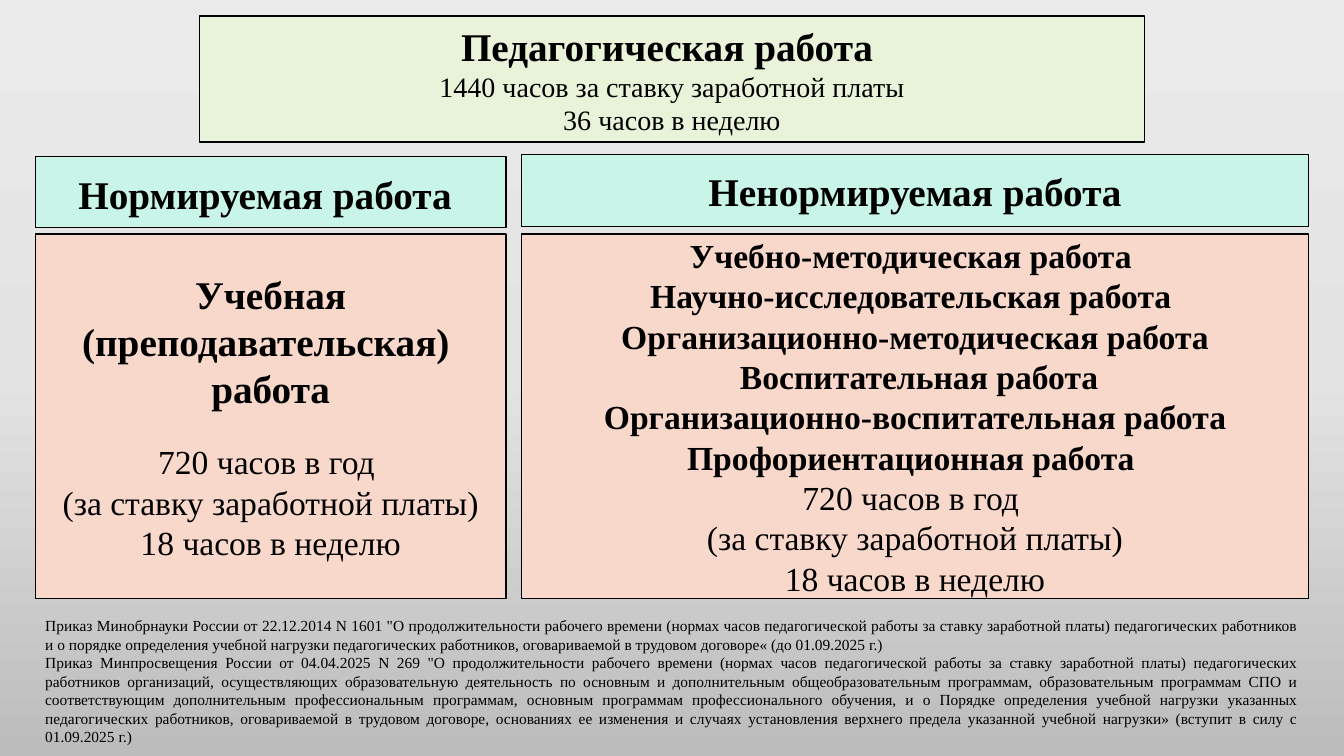
from copy import deepcopy

from pptx import Presentation
from pptx.dml.color import RGBColor
from pptx.enum.shapes import MSO_SHAPE
from pptx.enum.text import MSO_ANCHOR, PP_ALIGN
from pptx.oxml.ns import qn
from pptx.util import Emu, Pt

RECTANGLE = MSO_SHAPE.RECTANGLE
MIDDLE = MSO_ANCHOR.MIDDLE
CENTER = PP_ALIGN.CENTER
JUSTIFY = PP_ALIGN.JUSTIFY

BLACK = RGBColor(0x00, 0x00, 0x00)
GREEN = RGBColor(0xE8, 0xF3, 0xDA)
MINT = RGBColor(0xC8, 0xF5, 0xE8)
PEACH = RGBColor(0xF8, 0xD8, 0xCA)
BACKGROUND = [
    (0, RGBColor(0xEB, 0xEA, 0xEA)),
    (0.5, RGBColor(0xE4, 0xE3, 0xE3)),
    (1, RGBColor(0xBD, 0xBC, 0xBC)),
]

EMU_PER_PX = 9144
LEFT_X, LEFT_WIDTH = 35, 467
RIGHT_X, RIGHT_WIDTH = 517, 781
BODY_Y, BODY_HEIGHT = 232, 362

HOURS = ["720 часов в год ", "(за ставку заработной платы)", "18 часов в неделю"]
UNREGULATED_WORK = [
    "Учебно-методическая работа ",
    "Научно-исследовательская работа ",
    "Организационно-методическая работа",
    " Воспитательная работа",
    "Организационно-воспитательная работа",
    "Профориентационная работа ",
]
ORDERS = [
    "Приказ Минобрнауки России от 22.12.2014 N 1601 \"О продолжительности рабочего "
    "времени (нормах часов педагогической работы за ставку заработной платы) "
    "педагогических работников и о порядке определения учебной нагрузки педагогических "
    "работников, оговариваемой в трудовом договоре« (до 01.09.2025 г.)",
    "Приказ Минпросвещения России от 04.04.2025 N 269 \"О продолжительности рабочего "
    "времени (нормах часов педагогической работы за ставку заработной платы) "
    "педагогических работников организаций, осуществляющих образовательную деятельность "
    "по основным и дополнительным общеобразовательным программам, образовательным "
    "программам СПО и соответствующим дополнительным профессиональным программам, "
    "основным программам профессионального обучения, и о Порядке определения учебной "
    "нагрузки указанных педагогических работников, оговариваемой в трудовом договоре, "
    "основаниях ее изменения и случаях установления верхнего предела указанной учебной "
    "нагрузки» (вступит в силу с 01.09.2025 г.)",
]


def lines(texts, size, bold=False):
    """Return one single-run paragraph for each text."""
    return [[(text, size, bold)] for text in texts]


class SlideBuilder:
    """Holds the style and the current slide."""

    font = "Times New Roman"
    line_width = Pt(1)

    def __init__(self, slide):
        self.slide = slide

    def background(self, stops):
        """Fill the background with a vertical gradient."""
        fill = self.slide.background.fill
        fill.gradient()
        fill.gradient_angle = 270
        stop_list = self.slide.element.find(".//" + qn("a:gsLst"))
        while len(stop_list) < len(stops):
            stop_list.append(deepcopy(stop_list[0]))
        for stop, (position, color) in zip(fill.gradient_stops, stops):
            stop.position = position
            stop.color.rgb = color

    def box(self, bounds, color, paragraphs):
        """Add an outlined rectangle with centred text."""
        shape = self.slide.shapes.add_shape(RECTANGLE, *self.scale(bounds))
        shape.shadow.inherit = False
        shape.fill.solid()
        shape.fill.fore_color.rgb = color
        shape.line.color.rgb = BLACK
        shape.line.width = self.line_width
        return self.fill_text(shape.text_frame, paragraphs, CENTER)

    def note(self, bounds, paragraphs):
        """Add a justified text box."""
        shape = self.slide.shapes.add_textbox(*self.scale(bounds))
        return self.fill_text(shape.text_frame, paragraphs, JUSTIFY)

    def scale(self, bounds):
        """Turn px lengths into EMU."""
        return [Emu(length * EMU_PER_PX) for length in bounds]

    def fill_text(self, frame, paragraphs, alignment):
        """Add paragraphs run by run and return the text frame."""
        frame.word_wrap = True
        frame.vertical_anchor = MIDDLE
        for index, runs in enumerate(paragraphs):
            paragraph = frame.add_paragraph() if index else frame.paragraphs[0]
            paragraph.alignment = alignment
            for text, size, bold in runs:
                run = paragraph.add_run()
                run.text = text
                run.font.name = self.font
                run.font.size = Pt(size)
                run.font.bold = bold
                run.font.color.rgb = BLACK
        return frame


def main():
    """Build the slide and save it."""
    presentation = Presentation()
    presentation.slide_width = Emu(1333 * EMU_PER_PX)
    presentation.slide_height = Emu(750 * EMU_PER_PX)
    builder = SlideBuilder(presentation.slides.add_slide(presentation.slide_layouts[6]))
    builder.background(BACKGROUND)

    builder.box(
        (198, 16, 937, 125),
        GREEN,
        lines(["Педагогическая работа "], 28, True)
        + lines(["1440 часов за ставку заработной платы", "36 часов в неделю"], 20),
    )
    builder.box(
        (LEFT_X, 155, LEFT_WIDTH, 71),
        MINT,
        [[("Нормируемая работа", 28, True), (" ", 32, True)]],
    )
    builder.box(
        (RIGHT_X, 153, RIGHT_WIDTH, 72),
        MINT,
        lines(["Ненормируемая работа"], 28, True),
    )

    teaching = lines(["Учебная (преподавательская) ", "работа"], 28, True)
    teaching_frame = builder.box(
        (LEFT_X, BODY_Y, LEFT_WIDTH, BODY_HEIGHT), PEACH, teaching + lines(HOURS, 24)
    )
    teaching_frame.paragraphs[len(teaching)].space_before = Pt(21)

    builder.box(
        (RIGHT_X, BODY_Y, RIGHT_WIDTH, BODY_HEIGHT),
        PEACH,
        lines(UNREGULATED_WORK, 24, True) + lines(HOURS, 24),
    )
    builder.note((LEFT_X, 601, 1263, 149), lines(ORDERS, 11))
    presentation.save("out.pptx")


if __name__ == "__main__":
    main()
